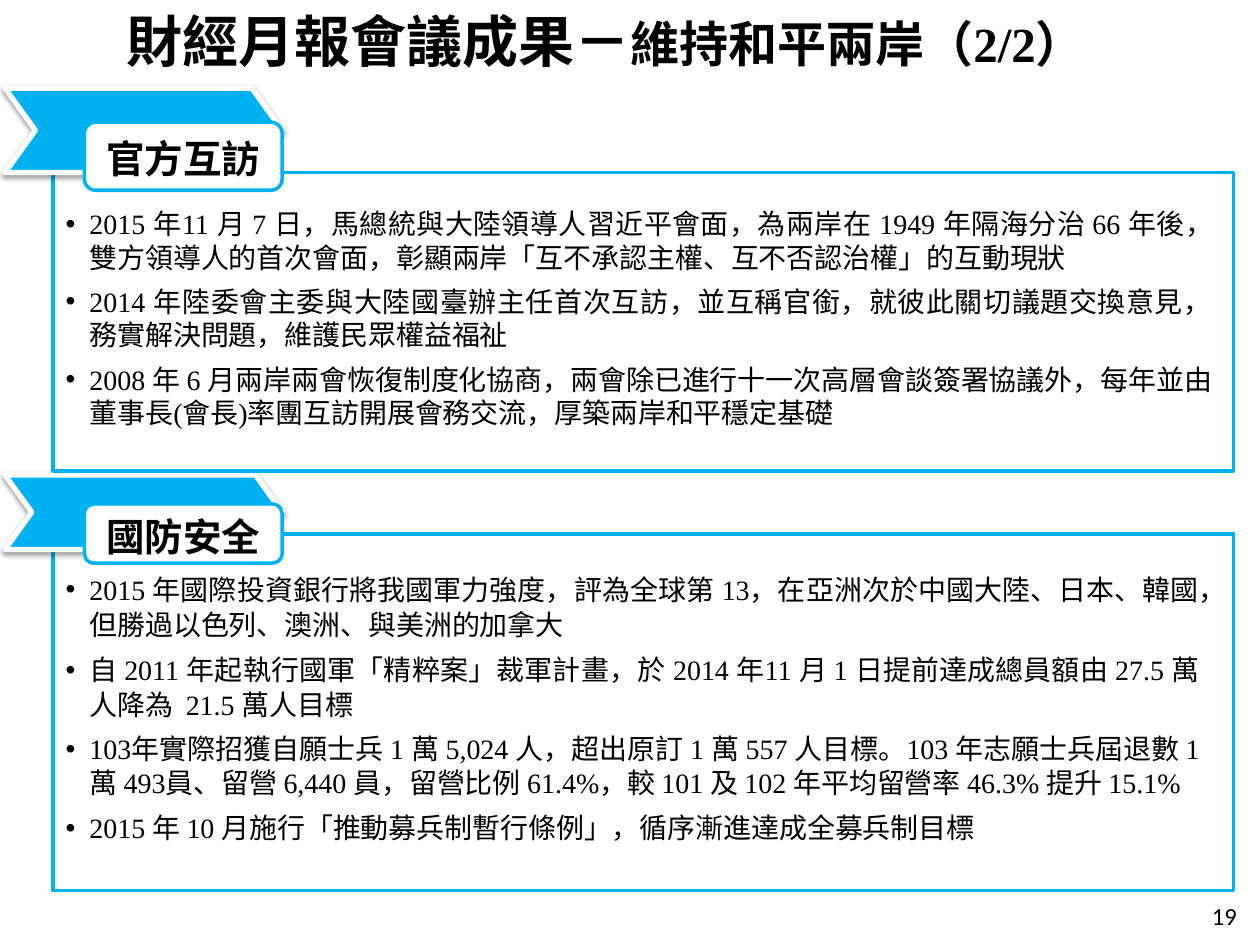
from lxml import etree
from pptx import Presentation
from pptx import util as u
from pptx.dml.color import RGBColor
from pptx.enum import shapes, text
from pptx.oxml.ns import qn

SERIF, SANS = "Times New Roman", "Noto Sans CJK SC"
BLUE, WHITE, BLACK = "00B0F0", "FFFFFF", "000000"
EDGE, WIDE = 0.42, 9.37  # left and width of both panels

VISITS = [
    "2015 年11 月 7 日，馬總統與大陸領導人習近平會面，為兩岸在 1949 年隔海分治 66 年後，"
    "雙方領導人的首次會面，彰顯兩岸「互不承認主權、互不否認治權」的互動現狀",
    "2014 年陸委會主委與大陸國臺辦主任首次互訪，並互稱官銜，就彼此關切議題交換意見，"
    "務實解決問題，維護民眾權益福祉",
    "2008 年 6 月兩岸兩會恢復制度化協商，兩會除已進行十一次高層會談簽署協議外，"
    "每年並由董事長(會長)率團互訪開展會務交流，厚築兩岸和平穩定基礎",
]
DEFENCE = [
    "2015 年國際投資銀行將我國軍力強度，評為全球第 13，在亞洲次於中國大陸、日本、韓國，"
    "但勝過以色列、澳洲、與美洲的加拿大",
    "自 2011 年起執行國軍「精粹案」裁軍計畫，於 2014 年11 月 1 日提前達成總員額由 "
    "27.5 萬人降為  21.5 萬人目標",
    "103年實際招獲自願士兵 1 萬 5,024 人，超出原訂 1 萬 557 人目標。103 年志願士兵屆退數 "
    "1 萬 493員、留營 6,440 員，留營比例 61.4%，較 101 及 102 年平均留營率 46.3% 提升 15.1%",
    "2015 年 10 月施行「推動募兵制暫行條例」，循序漸進達成全募兵制目標",
]


def color(code):
    return RGBColor.from_string(code)


def style(font, size, name, bold=False):
    font.size, font.name, font.bold = u.Pt(size), name, bold
    font.color.rgb = color(BLACK)


def place(shape, *box):
    shape.left, shape.top, shape.width, shape.height = map(u.Inches, box)


def block(slide, kind, box, fill, line, width):
    shape = slide.shapes.add_shape(kind, *map(u.Inches, box))
    shape.shadow.inherit = False
    shape.fill.solid()
    shape.fill.fore_color.rgb = color(fill)
    shape.line.color.rgb = color(line)
    shape.line.width = u.Pt(width)
    return shape


def shade(shape):
    """Give the shape a soft shadow below it."""
    effects = shape._element.spPr.find(qn("a:effectLst"))
    outer = etree.SubElement(effects, qn("a:outerShdw"), blurRad=str(u.Pt(3.1)),
                             dist=str(u.Pt(1.6)), dir="5400000", rotWithShape="0")
    tint = etree.SubElement(outer, qn("a:srgbClr"), val=BLACK)
    etree.SubElement(tint, qn("a:alpha"), val="38000")


def badge(slide, label, box):
    shape = block(slide, shapes.MSO_SHAPE.ROUNDED_RECTANGLE, box, WHITE, BLUE, 2)
    frame = shape.text_frame
    frame.margin_left = frame.margin_right = frame.margin_top = frame.margin_bottom = 0
    frame.vertical_anchor = text.MSO_ANCHOR.MIDDLE
    para = frame.paragraphs[0]
    para.text = label
    para.alignment = text.PP_ALIGN.CENTER
    para.line_spacing = 1.1
    style(para.font, 22, SANS, True)


def panel(slide, label, top, tall, ribbon, tab):
    """Frame with a ribbon and a tab; ribbon and tab are (top, height)."""
    kind = shapes.MSO_SHAPE
    block(slide, kind.RECTANGLE, (EDGE, top, WIDE, tall), WHITE, BLUE, 2)
    arrow = block(slide, kind.CHEVRON, (0.04, ribbon[0], 2.2, ribbon[1]), BLUE, WHITE, 3)
    arrow.adjustments[0] = 0.36
    shade(arrow)
    badge(slide, label, (0.67, tab[0], 1.57, tab[1]))


def bullets(slide, body, items, box, loose=()):
    """Fill a body placeholder; loose items keep single line spacing."""
    place(body, *box)
    slide.shapes._spTree.append(body._element)  # in front of its panel
    frame = body.text_frame
    frame.auto_size = text.MSO_AUTO_SIZE.NONE
    for i, item in enumerate(items):
        para = frame.add_paragraph() if i else frame.paragraphs[0]
        para.text = item
        props = para._p.get_or_add_pPr()
        props.set("marL", str(u.Inches(0.19)))
        props.set("indent", str(u.Inches(-0.19)))
        para.alignment = text.PP_ALIGN.JUSTIFY
        para.line_spacing = 1.0 if i in loose else u.Pt(20)
        para.space_before = u.Pt(6 if i else 0)
        etree.SubElement(props, qn("a:buChar"), char="•")
        style(para.font, 16, SERIF)


def heading(title):
    place(title, 0.04, 0, 9.14, 0.7)
    frame = title.text_frame
    frame.auto_size = text.MSO_AUTO_SIZE.NONE
    frame.vertical_anchor = text.MSO_ANCHOR.MIDDLE
    para = frame.paragraphs[0]
    para._p.get_or_add_pPr().set("marL", str(u.Inches(0.39)))
    para.alignment = text.PP_ALIGN.CENTER
    para.line_spacing = 0.9
    for words, size in (("財經月報會議成果－", 32), ("維持和平兩岸（2/2）", 28)):
        run = para.add_run()
        run.text = words
        style(run.font, size, SERIF, True)


def number(slide, value):
    box = slide.shapes.add_textbox(*map(u.Inches, (9.52, 7.1, 0.57, 0.4)))
    para = box.text_frame.paragraphs[0]
    para.text = value
    style(para.font, 14, "Calibri")


def main():
    deck = Presentation()
    deck.slide_width, deck.slide_height = u.Inches(10), u.Inches(7.5)
    slide = deck.slides.add_slide(deck.slide_layouts[3])
    title, first, second = slide.placeholders
    heading(title)
    panel(slide, "國防安全", 4.24, 2.83, (3.77, 0.59), (4, 0.47))
    bullets(slide, second, DEFENCE, (EDGE, 4.48, 9.2, 2.92), loose=(2,))
    panel(slide, "官方互訪", 1.37, 2.37, (0.7, 0.67), (0.97, 0.54))
    bullets(slide, first, VISITS, (EDGE, 1.59, 9.31, 1.88), loose=range(3))
    number(slide, "19")
    deck.save("out.pptx")


if __name__ == "__main__":
    main()
